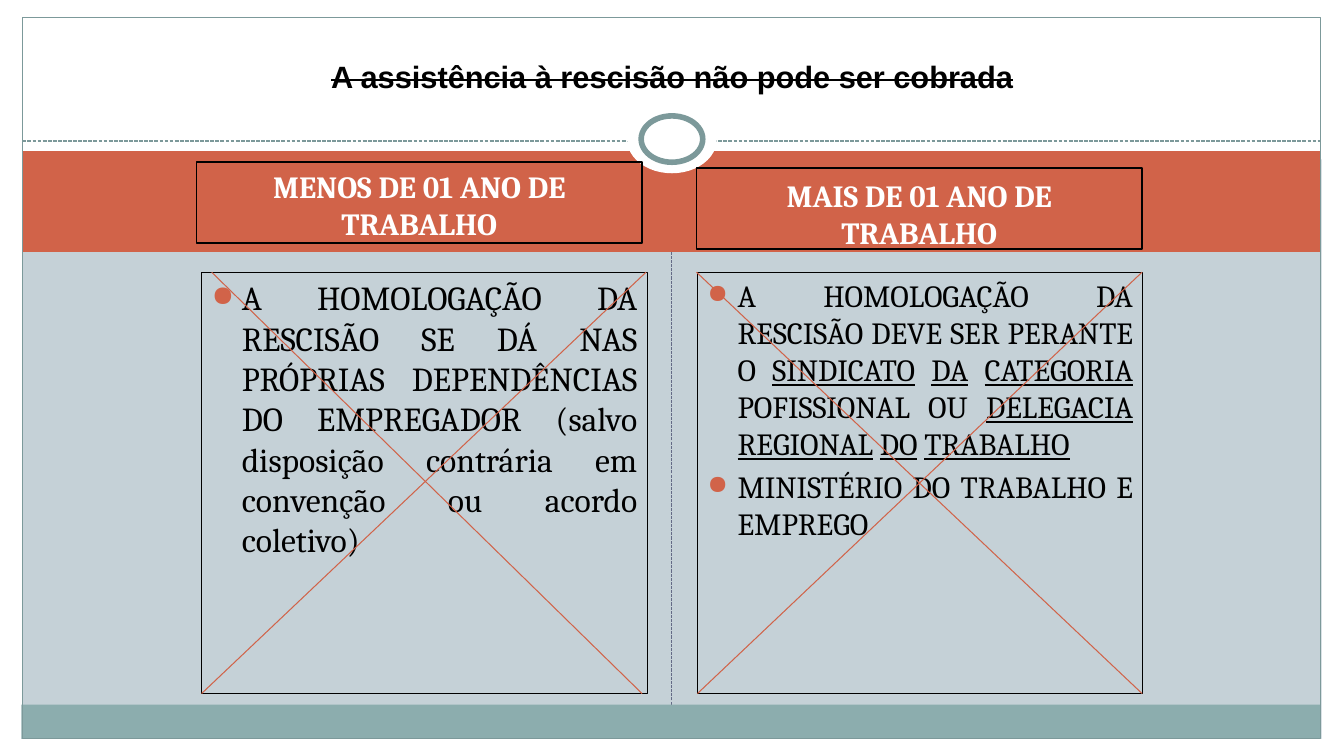
from lxml import etree
from pptx import Presentation
from pptx.dml.color import RGBColor
from pptx.enum.dml import MSO_LINE
from pptx.enum.shapes import MSO_CONNECTOR, MSO_SHAPE
from pptx.enum.text import MSO_ANCHOR, PP_ALIGN
from pptx.oxml.ns import qn
from pptx.util import Pt

RECT, OVAL = MSO_SHAPE.RECTANGLE, MSO_SHAPE.OVAL
STRAIGHT = MSO_CONNECTOR.STRAIGHT
DASH = MSO_LINE.SQUARE_DOT
TOP, MIDDLE = MSO_ANCHOR.TOP, MSO_ANCHOR.MIDDLE
CENTER, JUSTIFY = PP_ALIGN.CENTER, PP_ALIGN.JUSTIFY

COLORS = {
    "background": "C5D1D7", "white": "FFFFFF", "black": "000000",
    "accent": "D16349", "footer": "8CADAE", "frame": "7C999A",
    "divider": "646B86",
}
TITLE = {"name": "Arial", "size": Pt(22), "bold": True}
HEADING = {"name": "Cambria", "size": Pt(22), "bold": True}
BULLET_INDENT = 21.6
COLUMN_WIDTH, HEADING_HEIGHT = 318.2, 57.6
BODY_TOP, BODY_HEIGHT = 194.4, 301
BODY_BOTTOM = BODY_TOP + BODY_HEIGHT

COLUMNS = [
    {
        "heading": "MENOS DE 01 ANO DE TRABALHO",
        "heading_at": (140.4, 115.9), "heading_inset": 3.6,
        "body_left": 144, "size": 24,
        "items": [
            "A HOMOLOGAÇÃO DA RESCISÃO SE DÁ NAS PRÓPRIAS DEPENDÊNCIAS DO "
            "EMPREGADOR (salvo disposição contrária em convenção ou acordo coletivo)",
        ],
        "cross": [(151.2, BODY_TOP, 458.6, BODY_BOTTOM),
                  (144, BODY_BOTTOM, 461.5, BODY_TOP)],
    },
    {
        "heading": "MAIS DE 01 ANO DE TRABALHO",
        "heading_at": (497.5, 120.2), "heading_inset": 7.2,
        "body_left": 498.2, "size": 22,
        "items": [
            "A HOMOLOGAÇÃO DA RESCISÃO DEVE SER PERANTE O _SINDICATO_ _DA_ "
            "_CATEGORIA_ POFISSIONAL OU _DELEGACIA_ _REGIONAL_ _DO_ _TRABALHO_",
            "MINISTÉRIO DO TRABALHO E EMPREGO",
        ],
        "cross": [(498.2, BODY_BOTTOM, 815.8, BODY_TOP),
                  (497.5, BODY_TOP, 815.8, BODY_BOTTOM)],
    },
]


def rgb(color):
    return RGBColor.from_string(COLORS[color])


def apply_format(target, values):
    for attribute, value in values.items():
        setattr(target, attribute, value)


def add_panel(slide, kind, box, fill=None, line=None, width=0.75):
    panel = slide.shapes.add_shape(kind, *map(Pt, box))
    panel.shadow.inherit = False
    if fill:
        panel.fill.solid()
        panel.fill.fore_color.rgb = rgb(fill)
    else:
        panel.fill.background()
    if line:
        panel.line.color.rgb = rgb(line)
        panel.line.width = Pt(width)
    else:
        panel.line.fill.background()
    return panel


def add_rule(slide, ends, color, width=0.75, dash=None):
    rule = slide.shapes.add_connector(STRAIGHT, *map(Pt, ends))
    rule.line.color.rgb = rgb(color)
    rule.line.width = Pt(width)
    if dash:
        rule.line.dash_style = dash
    etree.SubElement(rule._element.spPr, qn("a:effectLst"))


def set_frame(frame, anchor, top=3.6, bottom=3.6):
    apply_format(frame, {
        "word_wrap": True, "vertical_anchor": anchor,
        "margin_left": Pt(7.2), "margin_right": Pt(7.2),
        "margin_top": Pt(top), "margin_bottom": Pt(bottom),
    })


def add_run(paragraph, text, style, color):
    run = paragraph.add_run()
    run.text = text
    apply_format(run.font, style)
    run.font.color.rgb = rgb(color)
    return run


def add_bullet(paragraph):
    properties = paragraph._p.get_or_add_pPr()
    properties.set("marL", str(Pt(BULLET_INDENT)))
    properties.set("indent", str(-Pt(BULLET_INDENT)))
    bullet_color = etree.SubElement(properties, qn("a:buClr"))
    etree.SubElement(bullet_color, qn("a:srgbClr"), val=COLORS["accent"])
    etree.SubElement(properties, qn("a:buSzPct"), val="85000")
    etree.SubElement(properties, qn("a:buChar"), char="●")


def add_title(slide, text):
    frame = slide.shapes.add_textbox(Pt(162.7), Pt(37.4), Pt(635), Pt(33.8)).text_frame
    set_frame(frame, TOP)
    paragraph = frame.paragraphs[0]
    paragraph.alignment = CENTER
    run = add_run(paragraph, text, TITLE, "black")
    run._r.get_or_add_rPr().set("strike", "sngStrike")


def add_heading(slide, column):
    box = (*column["heading_at"], COLUMN_WIDTH, HEADING_HEIGHT)
    frame = add_panel(slide, RECT, box, line="black", width=1.25).text_frame
    set_frame(frame, MIDDLE, top=column["heading_inset"], bottom=0)
    paragraph = frame.paragraphs[0]
    paragraph.alignment = CENTER
    add_run(paragraph, column["heading"], HEADING, "white")


def add_body(slide, column):
    box = (column["body_left"], BODY_TOP, COLUMN_WIDTH, BODY_HEIGHT)
    frame = add_panel(slide, RECT, box, line="black").text_frame
    set_frame(frame, TOP)
    for position, item in enumerate(column["items"]):
        paragraph = frame.add_paragraph() if position else frame.paragraphs[0]
        add_bullet(paragraph)
        paragraph.alignment = JUSTIFY
        if position:
            paragraph.space_before = Pt(0.2 * column["size"])
        for index, part in enumerate(item.split("_")):
            if part:
                style = {"name": "Cambria", "size": Pt(column["size"]),
                         "underline": index % 2 == 1}
                add_run(paragraph, part, style, "black")


def add_backdrop(slide):
    slide.background.fill.solid()
    slide.background.fill.fore_color.rgb = rgb("background")
    add_rule(slide, (480, 503.3, 480, 173.5), "divider", dash=DASH)
    for box in [(0, 0, 960, 113.8), (0, 527.8, 960, 12.2),
                (0, 0, 16, 540), (944, 0, 16, 540)]:
        add_panel(slide, RECT, box, fill="white")
    add_panel(slide, RECT, (16, 108, 927.4, 72), fill="accent")
    add_panel(slide, RECT, (15.3, 503.3, 927.4, 24.5), fill="footer")
    add_rule(slide, (16, 100.8, 943.4, 100.8), "frame", 0.9, DASH)
    add_panel(slide, RECT, (16, 12.2, 927.4, 515.6), line="frame")
    add_panel(slide, OVAL, (448, 75.6, 64, 48.2), fill="white")
    add_panel(slide, OVAL, (458, 82.8, 44, 33.1), "white", "frame", 4)


def main():
    presentation = Presentation()
    presentation.slide_width, presentation.slide_height = Pt(960), Pt(540)
    slide = presentation.slides.add_slide(presentation.slide_layouts[6])
    add_backdrop(slide)
    for column in COLUMNS:
        add_heading(slide, column)
        add_body(slide, column)
    add_title(slide, "A assistência à rescisão não pode ser cobrada")
    for column in COLUMNS:
        for ends in column["cross"]:
            add_rule(slide, ends, "accent")
    presentation.save("out.pptx")


if __name__ == "__main__":
    main()
